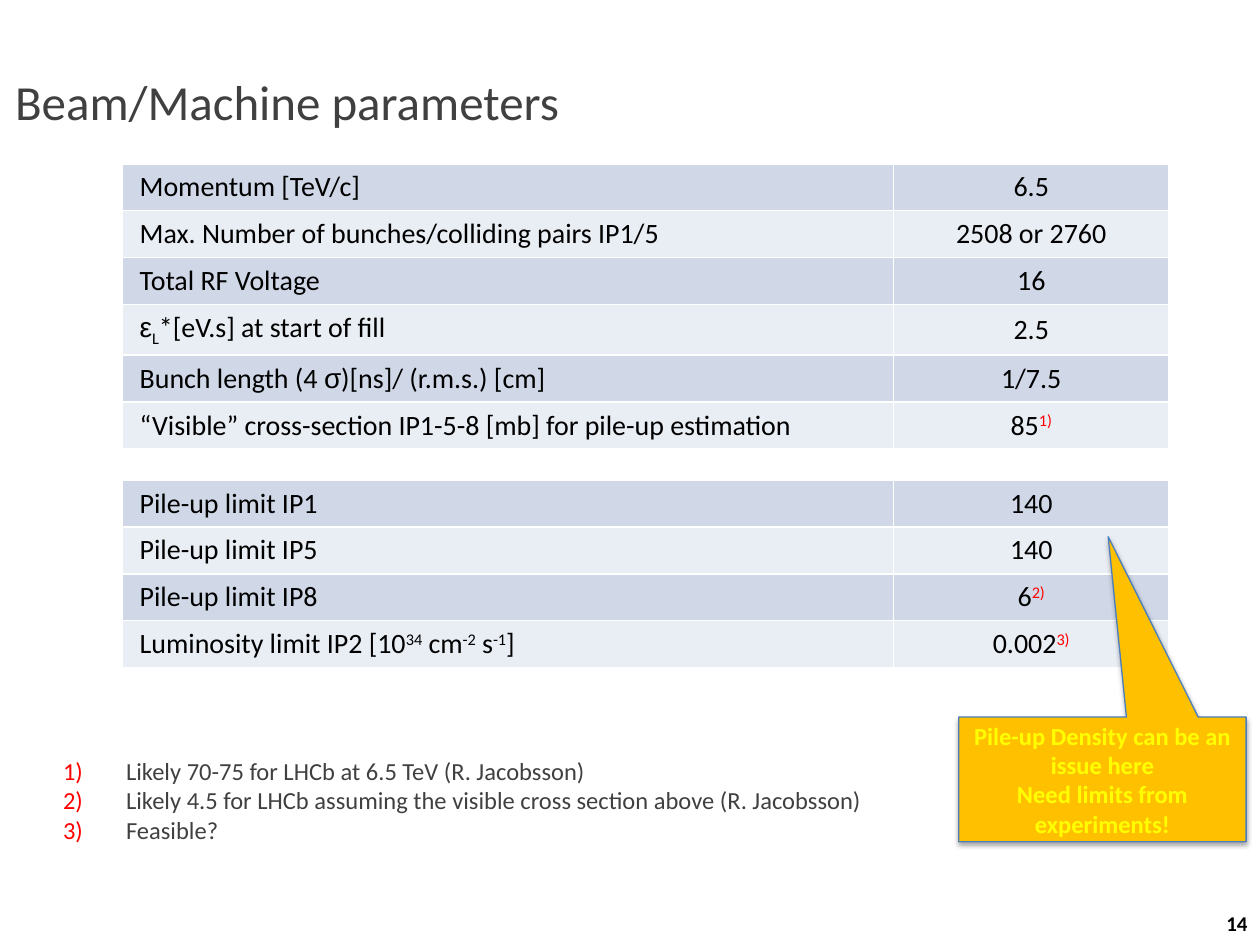
from lxml.etree import SubElement
from pptx import Presentation
from pptx.dml.color import RGBColor
from pptx.enum.shapes import MSO_SHAPE as Shape
from pptx.enum.text import MSO_ANCHOR as Anchor, MSO_AUTO_SIZE as AutoSize, PP_ALIGN as Align
from pptx.oxml import parse_xml
from pptx.oxml.ns import nsdecls, qn
from pptx.util import Pt

# Content: a text is a list of (words, style) spans
TITLE = "Beam/Machine parameters"
PAGE_NUMBER = "14"
BEAM_ROWS = [
    ([("Momentum [TeV/c]", "cell")], [("6.5", "cell")]),
    ([("Max. Number of bunches/colliding pairs IP1/5", "cell")], [("2508 or 2760", "cell")]),
    ([("Total RF Voltage", "cell")], [("16", "cell")]),
    ([("ε", "greek"), ("L", "sub"), ("*[eV.s] at start of fill", "cell")], [("2.5", "cell")]),
    ([("Bunch length (4 ", "cell"), ("σ", "greek"), (")[ns]/ (r.m.s.) [cm]", "cell")],
     [("1/7.5", "cell")]),
    ([("“Visible” cross-section IP1-5-8 [mb] for pile-up estimation", "cell")],
     [("85", "cell"), ("1)", "mark")]),
]
LIMIT_ROWS = [
    ([("Pile-up limit IP1", "cell")], [("140", "cell")]),
    ([("Pile-up limit IP5", "cell")], [("140", "cell")]),
    ([("Pile-up limit IP8", "cell")], [("6", "cell"), ("2)", "mark")]),
    ([("Luminosity limit IP2 [10", "cell"), ("34", "sup"), (" cm", "cell"), ("-2", "sup"),
      (" s", "cell"), ("-1", "sup"), ("]", "cell")],
     [("0.002", "cell"), ("3)", "mark")]),
]
NOTES = [
    "Likely 70-75 for LHCb at 6.5 TeV (R. Jacobsson)",
    "Likely 4.5 for LHCb assuming the visible cross section above (R. Jacobsson)",
    "Feasible?",
]
CALLOUT = ["Pile-up Density can be an issue here", "Need limits from experiments!"]

# Colours and type
THEME = {
    "bands": ["D0D8E8", "E9EDF4"],
    "border": "FFFFFF",
    "number": "FF0000",
    "callout_fill": "FFC000",
    "callout_line": "4B7EBC",
    "shadow": "000000",
    "text": {  # size, colour, bold, font, baseline in percent
        "title": (28, "404040", False, "Calibri", 0),
        "cell": (16, "000000", False, "Calibri", 0),
        "greek": (16, "000000", False, "Arial", 0),
        "sub": (16, "000000", False, "Calibri", -25),
        "sup": (16, "000000", False, "Calibri", 30),
        "mark": (16, "FF0000", False, "Calibri", 30),
        "note": (14, "404040", False, "Calibri", 0),
        "callout": (14, "FFFF00", True, "Calibri", 0),
        "page": (12, "000000", True, "Calibri", 0),
    },
}

# Geometry in points: left, top, width, height
PAGE_SIZE = (720, 540)
TITLE_AREA = (5.76, 21.6, 706.32, 72)
NOTES_AREA = (14.4, 432, 705.6, 85.68)
NUMBER_AREA = (684, 514.8, 36, 25.2)
CALLOUT_AREA = (547.92, 409.68, 164.16, 71.28)
CALLOUT_TIP = (0.02, -1.945)
TABLE_LEFT, ROW_HEIGHT = 69.84, 20.16
COLUMNS = [(440.64, Align.LEFT), (157.68, Align.CENTER)]
BEAM_TOP, LIMIT_TOP = 93.6, 274.32


def points(values):
    return [Pt(value) for value in values]


def apply(target, values):
    for name, value in values.items():
        setattr(target, name, value)


def margins(side, end):
    return {"margin_left": Pt(side), "margin_right": Pt(side),
            "margin_top": Pt(end), "margin_bottom": Pt(end)}


def place(box, area):
    apply(box, dict(zip(("left", "top", "width", "height"), points(area))))


def write(para, spans, align):
    apply(para, {"alignment": align, "space_before": Pt(0)})
    for words, style in spans:
        size, colour, bold, name, baseline = THEME["text"][style]
        span = para.add_run()
        span.text = words
        apply(span.font, {"size": Pt(size), "bold": bold, "name": name})
        span.font.color.rgb = RGBColor.from_string(colour)
        if baseline:
            span.font._element.set("baseline", str(baseline * 1000))


def fill_frame(frame, lines, style, align, **layout):
    apply(frame, {"word_wrap": True, "auto_size": AutoSize.NONE, **layout})
    for index, line in enumerate(lines):
        para = frame.add_paragraph() if index else frame.paragraphs[0]
        write(para, [(line, style)], align)


def add_borders(cell):
    properties = cell._tc.get_or_add_tcPr()
    for side in ("lnL", "lnR", "lnT", "lnB"):
        line = SubElement(properties, qn(f"a:{side}"), w=str(Pt(1)))
        paint = SubElement(line, qn("a:solidFill"))
        SubElement(paint, qn("a:srgbClr"), val=THEME["border"])


def add_parameters(page, rows, top):
    area = (TABLE_LEFT, top, sum(width for width, _ in COLUMNS), ROW_HEIGHT * len(rows))
    table = page.shapes.add_table(len(rows), len(COLUMNS), *points(area)).table
    apply(table, {"first_row": False, "horz_banding": False})
    for column, (width, _) in zip(table.columns, COLUMNS):
        column.width = Pt(width)
    for r, texts in enumerate(rows):
        table.rows[r].height = Pt(ROW_HEIGHT)
        for c, spans in enumerate(texts):
            cell = table.cell(r, c)
            apply(cell, {"vertical_anchor": Anchor.MIDDLE, **margins(10, 3.6)})
            add_borders(cell)
            cell.fill.solid()
            cell.fill.fore_color.rgb = RGBColor.from_string(THEME["bands"][r % 2])
            write(cell.text_frame.paragraphs[0], spans, COLUMNS[c][1])


def number_paragraph(para):
    properties = para._p.get_or_add_pPr()
    properties.set("marL", str(Pt(50.4)))
    properties.set("indent", str(Pt(-36)))
    colour = SubElement(properties, qn("a:buClr"))
    SubElement(colour, qn("a:srgbClr"), val=THEME["number"])
    SubElement(properties, qn("a:buFont"), typeface="+mj-lt")
    SubElement(properties, qn("a:buAutoNum"), type="arabicParenR")


def add_callout(page):
    box = page.shapes.add_shape(Shape.RECTANGULAR_CALLOUT, *points(CALLOUT_AREA))
    box.adjustments[0], box.adjustments[1] = CALLOUT_TIP
    box.fill.solid()
    box.fill.fore_color.rgb = RGBColor.from_string(THEME["callout_fill"])
    box.line.color.rgb = RGBColor.from_string(THEME["callout_line"])
    box.line.width = Pt(0.75)
    box.shadow.inherit = False
    effects = box._element.spPr.find(qn("a:effectLst"))
    effects.append(parse_xml(
        f'<a:outerShdw {nsdecls("a")} blurRad="{Pt(3.1)}" dist="{Pt(1.8)}" dir="5400000" '
        f'rotWithShape="0"><a:srgbClr val="{THEME["shadow"]}"><a:alpha val="35000"/>'
        '</a:srgbClr></a:outerShdw>'))
    fill_frame(box.text_frame, CALLOUT, "callout", Align.CENTER, vertical_anchor=Anchor.MIDDLE)


def main():
    deck = Presentation()
    deck.slide_width, deck.slide_height = points(PAGE_SIZE)
    page = deck.slides.add_slide(deck.slide_layouts[1])

    # Title
    title = page.shapes.title
    place(title, TITLE_AREA)
    fill_frame(title.text_frame, [TITLE], "title", Align.LEFT,
               vertical_anchor=Anchor.MIDDLE, **margins(2.88, 0))

    # Numbered notes
    notes = page.placeholders[1]
    place(notes, NOTES_AREA)
    fill_frame(notes.text_frame, NOTES, "note", Align.JUSTIFY,
               vertical_anchor=Anchor.TOP, **margins(7.2, 0))
    for para in notes.text_frame.paragraphs:
        number_paragraph(para)

    # Tables
    add_parameters(page, BEAM_ROWS, BEAM_TOP)
    add_parameters(page, LIMIT_ROWS, LIMIT_TOP)

    # Page number and callout
    number = page.shapes.add_textbox(*points(NUMBER_AREA))
    fill_frame(number.text_frame, [PAGE_NUMBER], "page", Align.RIGHT,
               vertical_anchor=Anchor.MIDDLE, **margins(7.2, 0))
    add_callout(page)

    deck.save("out.pptx")


if __name__ == "__main__":
    main()
